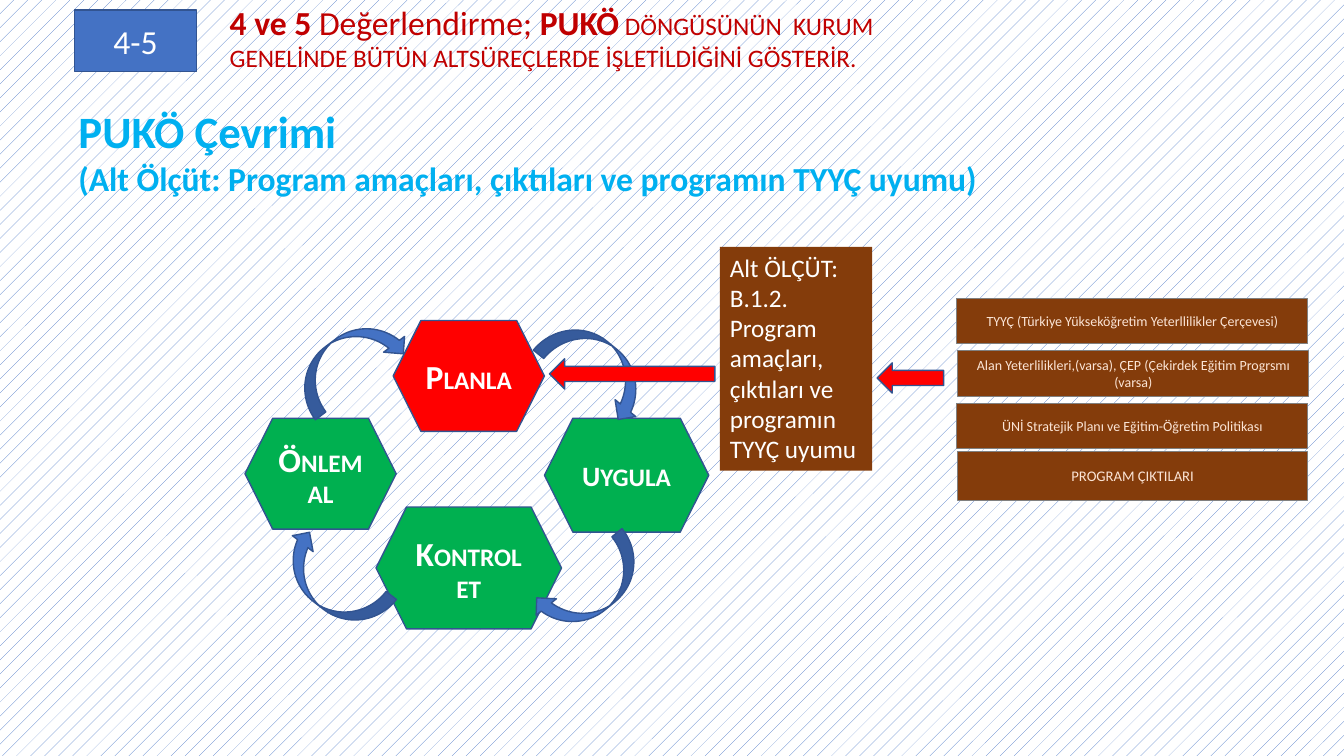
from dataclasses import dataclass

from pptx import Presentation
from pptx.dml.color import RGBColor
from pptx.enum.dml import MSO_PATTERN
from pptx.enum.shapes import MSO_SHAPE as Preset
from pptx.enum.text import MSO_ANCHOR as Anchor, MSO_AUTO_SIZE as AutoSize, PP_ALIGN as Align
from pptx.shapes.autoshape import Shape
from pptx.slide import Slide
from pptx.util import Inches, Pt

BLUE = RGBColor(0x44, 0x72, 0xC4)
DARK_BLUE = RGBColor(0x32, 0x54, 0x91)
SKY = RGBColor(0x00, 0xB0, 0xF0)
RED = RGBColor(0xFF, 0x00, 0x00)
DARK_RED = RGBColor(0xC0, 0x00, 0x00)
GREEN = RGBColor(0x00, 0xB0, 0x50)
BROWN = RGBColor(0x84, 0x3C, 0x0B)
PEACH = RGBColor(0xFB, 0xE4, 0xD5)
GREY = RGBColor(0x80, 0x80, 0x80)
WHITE = RGBColor(0xFF, 0xFF, 0xFF)


@dataclass(frozen=True)
class Box:
    left: float
    top: float
    width: float
    height: float

    def lengths(self) -> tuple[Inches, ...]:
        return tuple(Inches(v) for v in (self.left, self.top, self.width, self.height))


@dataclass(frozen=True)
class Piece:
    """A stretch of text in one size and weight."""
    text: str
    size: float
    bold: bool = False


@dataclass(frozen=True)
class Step:
    """A stage of the cycle, with a larger first letter."""
    initial: str
    rest: str
    box: Box
    fill: RGBColor = GREEN
    initial_size: float = 24


@dataclass(frozen=True)
class Turn:
    """A curved arrow between two stages."""
    box: Box
    rotation: float


@dataclass(frozen=True)
class Source:
    """A reference document that feeds the criterion."""
    text: str
    box: Box
    size: float = 10


STEPS = [
    Step("P", "LANLA", Box(3.9, 3.18, 1.5, 1.1), RED),
    Step("U", "YGULA", Box(5.4, 4.15, 1.63, 1.13), initial_size=20),
    Step("K", "ONTROL ET", Box(3.73, 5.03, 1.84, 1.21)),
    Step("Ö", "NLEM AL", Box(2.43, 4.15, 1.5, 1.1)),
]
TURNS = [
    Turn(Box(5.32, 3.39, 1.22, 0.53), 39.3),
    Turn(Box(5.25, 5.57, 1.22, 0.52), 140.9),
    Turn(Box(2.68, 5.52, 1.22, 0.52), 217.7),
    Turn(Box(2.85, 3.33, 1.22, 0.52), 323.1),
]
SOURCES = [
    Source("TYYÇ (Türkiye Yükseköğretim Yeterllilikler Çerçevesi)", Box(9.49, 2.96, 3.48, 0.45)),
    Source("Alan Yeterlilikleri,(varsa), ÇEP (Çekirdek Eğitim Progrsmı (varsa)",
           Box(9.5, 3.48, 3.48, 0.45)),
    Source("ÜNİ Stratejik Planı ve Eğitim-Öğretim Politikası", Box(9.49, 4, 3.48, 0.45)),
    Source("PROGRAM ÇIKTILARI", Box(9.5, 4.48, 3.47, 0.48), 10.5),
]
FEED_ARROWS = [Box(8.7, 3.6, 0.66, 0.3), Box(5.45, 3.56, 1.64, 0.3)]


def write(shape: Shape, paragraphs: list[list[Piece]], color: RGBColor,
          align: Align = Align.LEFT, anchor: Anchor = Anchor.TOP) -> None:
    frame = shape.text_frame
    frame.word_wrap = True
    frame.vertical_anchor = anchor
    for index, pieces in enumerate(paragraphs):
        paragraph = frame.add_paragraph() if index else frame.paragraphs[0]
        paragraph.alignment = align
        for piece in pieces:
            run = paragraph.add_run()
            run.text = piece.text
            run.font.name = "Calibri"
            run.font.size = Pt(piece.size)
            run.font.bold = piece.bold
            run.font.color.rgb = color


def add_figure(slide: Slide, preset: Preset, box: Box, fill: RGBColor,
               line: RGBColor | None = DARK_BLUE, line_width: float = 1) -> Shape:
    figure = slide.shapes.add_shape(preset, *box.lengths())
    figure.shadow.inherit = False
    figure.fill.solid()
    figure.fill.fore_color.rgb = fill
    if line is None:
        figure.line.fill.background()
    else:
        figure.line.color.rgb = line
        figure.line.width = Pt(line_width)
    return figure


def add_heading(slide: Slide, box: Box, paragraphs: list[list[Piece]], color: RGBColor) -> None:
    heading = slide.shapes.add_textbox(*box.lengths())
    write(heading, paragraphs, color)
    heading.text_frame.auto_size = AutoSize.SHAPE_TO_FIT_TEXT


def add_cycle(slide: Slide) -> None:
    for step in STEPS:
        hexagon = add_figure(slide, Preset.HEXAGON, step.box, step.fill)
        label = [Piece(step.initial, step.initial_size, True), Piece(step.rest, 18, True)]
        write(hexagon, [label], WHITE, Align.CENTER, Anchor.MIDDLE)
    for turn in TURNS:
        arrow = add_figure(slide, Preset.CURVED_DOWN_ARROW, turn.box, BLUE)
        arrow.rotation = turn.rotation


def add_criterion(slide: Slide) -> None:
    """Draw the sub-criterion, its sources and the arrows that lead to the cycle."""
    for source in SOURCES:
        plate = add_figure(slide, Preset.RECTANGLE, source.box, BROWN, GREY, 0.5)
        write(plate, [[Piece(source.text, source.size)]], PEACH, Align.CENTER, Anchor.MIDDLE)
    criterion = add_figure(slide, Preset.RECTANGLE, Box(7.14, 2.45, 1.51, 2.22), BROWN, None)
    write(criterion, [
        [Piece("Alt ÖLÇÜT:", 18)],
        [Piece("B.1.2. Program amaçları, çıktıları ve programın TYYÇ uyumu", 18)],
    ], WHITE)
    criterion.text_frame.auto_size = AutoSize.SHAPE_TO_FIT_TEXT
    for box in FEED_ARROWS:
        add_figure(slide, Preset.LEFT_ARROW, box, RED)


def main() -> None:
    deck = Presentation()
    deck.slide_width, deck.slide_height = Inches(13.33), Inches(7.5)
    slide = deck.slides.add_slide(deck.slide_layouts[6])
    backdrop = slide.background.fill
    backdrop.patterned()
    backdrop.pattern = MSO_PATTERN.PERCENT_5
    backdrop.fore_color.rgb = BLUE
    backdrop.back_color.rgb = WHITE

    score = add_figure(slide, Preset.RECTANGLE, Box(0.74, 0.1, 1.21, 0.61), BLUE)
    write(score, [[Piece("4-5", 24)]], WHITE, Align.CENTER, Anchor.MIDDLE)
    add_heading(slide, Box(2.18, -0.03, 7.77, 0.81), [[
        Piece("4 ve 5 ", 24, True),
        Piece("Değerlendirme;", 24),
        Piece(" PUKÖ", 24, True),
        Piece(" DÖNGÜSÜNÜN  KURUM GENELİNDE BÜTÜN ALTSÜREÇLERDE "
              "İŞLETİLDİĞİNİ GÖSTERİR.", 18),
    ]], DARK_RED)
    add_cycle(slide)
    add_criterion(slide)
    add_heading(slide, Box(0.68, 0.98, 11.63, 1.04), [
        [Piece("PUKÖ Çevrimi", 32, True)],
        [Piece("(Alt Ölçüt: Program amaçları, çıktıları ve programın TYYÇ uyumu)", 24, True)],
    ], SKY)
    deck.save("out.pptx")


if __name__ == "__main__":
    main()
